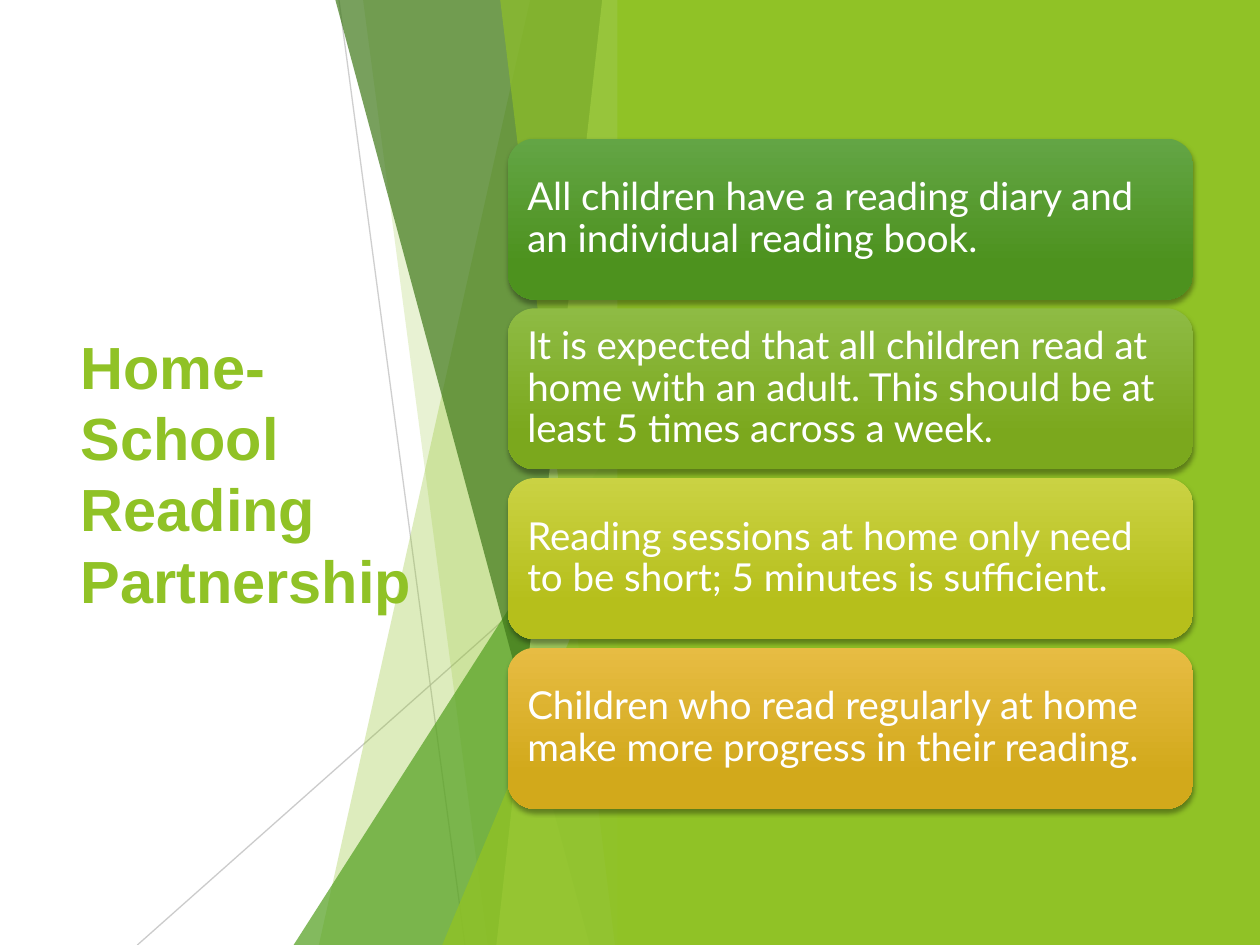
from lxml.etree import SubElement
from pptx import Presentation
from pptx.dml.color import RGBColor
from pptx.enum.shapes import MSO_CONNECTOR as Connector, MSO_SHAPE as Shape
from pptx.enum.text import MSO_ANCHOR as Anchor, MSO_AUTO_SIZE as AutoSize, PP_ALIGN as Align
from pptx.oxml.ns import qn
from pptx.util import Pt

WHITE = RGBColor(0xFF, 0xFF, 0xFF)
BLACK = RGBColor(0x00, 0x00, 0x00)
GREY = RGBColor(0xBF, 0xBF, 0xBF)
LIME = RGBColor(0x90, 0xC2, 0x26)
GREEN = RGBColor(0x54, 0xA0, 0x21)
FOREST = RGBColor(0x3F, 0x78, 0x19)
PALE = RGBColor(0xC0, 0xE4, 0x74)
CARD_COLOURS = [
    (RGBColor(0x63, 0xA5, 0x45), RGBColor(0x4D, 0x92, 0x1E)),
    (RGBColor(0x8E, 0xBB, 0x44), RGBColor(0x7B, 0xA8, 0x1D)),
    (RGBColor(0xCA, 0xD2, 0x43), RGBColor(0xB6, 0xBF, 0x1B)),
    (RGBColor(0xE7, 0xBC, 0x43), RGBColor(0xD2, 0xA9, 0x1B)),
]
CARD_TEXTS = [
    "All children have a reading diary and an individual reading book.",
    "It is expected that all children read at home with an adult. "
    "This should be at least 5 times across a week.",
    "Reading sessions at home only need to be short; 5 minutes is sufficient.",
    "Children who read regularly at home make more progress in their reading.",
]
WIDTH, HEIGHT = 720, 540
BAND_TOP, BAND_RIGHT = -0.6, 360
CARD_TOP, CARD_PITCH = 79.2, 97


def apply(target, values):
    for name, value in values.items():
        setattr(target, name, value)


class SlideBuilder:
    title_font = {"name": "Arial", "size": Pt(34), "bold": True}
    card_font = {"name": "Lato", "size": Pt(22)}
    card_frame = {"word_wrap": True, "vertical_anchor": Anchor.MIDDLE,
                  **{f"margin_{side}": Pt(6.6) for side in ("left", "top", "right", "bottom")}}

    def __init__(self, page):
        self.page = page
        self.shapes = page.shapes

    def fill_text(self, frame, text, font, colour, spacing=None):
        para = frame.paragraphs[0]
        apply(para, {"alignment": Align.LEFT, "line_spacing": spacing})
        span = para.add_run()
        span.text = text
        apply(span.font, font)
        span.font.color.rgb = colour

    def title(self, text, left, top, width, height):
        box = self.shapes.title
        apply(box, {"left": Pt(left), "top": Pt(top), "width": Pt(width), "height": Pt(height)})
        apply(box.text_frame, {"word_wrap": True, "auto_size": AutoSize.NONE,
                               "vertical_anchor": Anchor.MIDDLE})
        self.fill_text(box.text_frame, text, self.title_font, LIME)

    def fade(self, shape, opacity):
        for colour in shape._element.spPr.iter(qn("a:srgbClr")):
            SubElement(colour, qn("a:alpha"), val=str(opacity * 1000))

    def paint(self, shape, colour, opacity=100):
        shape.fill.solid()
        shape.fill.fore_color.rgb = colour
        if opacity < 100:
            self.fade(shape, opacity)
        shape.line.fill.background()
        shape.shadow.inherit = False

    def line(self, start, end, opacity):
        line = self.shapes.add_connector(Connector.STRAIGHT, *map(Pt, start + end))
        line.line.color.rgb = GREY
        line.line.width = Pt(0.75)
        self.fade(line, opacity)
        SubElement(line._element.spPr, qn("a:effectLst"))

    def band(self, top_left, bottom_left, colour, opacity):
        corners = [(BAND_RIGHT, BAND_TOP), (BAND_RIGHT, HEIGHT), (bottom_left, HEIGHT)]
        outline = self.shapes.build_freeform(Pt(top_left), Pt(BAND_TOP))
        outline.add_line_segments([(Pt(x), Pt(y)) for x, y in corners], close=True)
        self.paint(outline.convert_to_shape(), colour, opacity)

    def wedge(self, left, top, colour, opacity):
        shape = self.shapes.add_shape(Shape.ISOSCELES_TRIANGLE, Pt(left), Pt(top),
                                      Pt(BAND_RIGHT - left), Pt(HEIGHT - top))
        shape.adjustments[0] = 1
        self.paint(shape, colour, opacity)

    def panel(self, left):
        shape = self.shapes.add_shape(Shape.RECTANGLE, Pt(left), 0, Pt(WIDTH - left), Pt(HEIGHT))
        self.paint(shape, LIME)

    def card(self, text, top, colours):
        shape = self.shapes.add_shape(Shape.ROUNDED_RECTANGLE, Pt(290.2), Pt(top),
                                      Pt(391.6), Pt(92))
        shape.fill.gradient()
        shape.fill.gradient_angle = 270
        for stop, position, colour in zip(shape.fill.gradient_stops, (0, 0.78), colours):
            stop.position = position
            stop.color.rgb = colour
        shape.line.fill.background()
        self.drop_shadow(shape)
        apply(shape.text_frame, self.card_frame)
        self.fill_text(shape.text_frame, text, self.card_font, WHITE, 0.9)

    def drop_shadow(self, shape):
        shape.shadow.inherit = False
        effects = shape._element.spPr.find(qn("a:effectLst"))
        shadow = SubElement(effects, qn("a:outerShdw"), blurRad=str(Pt(3)), dist=str(Pt(2)),
                            dir="5400000", rotWithShape="0")
        colour = SubElement(shadow, qn("a:srgbClr"), val=str(BLACK))
        SubElement(colour, qn("a:alpha"), val="35000")


def main():
    deck = Presentation()
    apply(deck, {"slide_width": Pt(WIDTH), "slide_height": Pt(HEIGHT)})
    slide = SlideBuilder(deck.slides.add_slide(deck.slide_layouts[5]))

    slide.title("Home-School Reading Partnership", 39, 108.7, 209.5, 322.6)
    slide.line((193.7, 0), (265.7, HEIGHT), 75)
    slide.line((360, 290.2), (78.5, HEIGHT), 80)
    slide.band(303.1, 182.2, LIME, 30)
    slide.band(207.4, 278.6, LIME, 20)
    slide.wedge(167.8, 239.8, GREEN, 72)
    slide.band(191.5, 337, FOREST, 70)
    slide.band(344.2, 283.7, PALE, 70)
    slide.band(285.8, 351.4, LIME, 65)
    slide.wedge(252.7, 283, LIME, 80)
    slide.panel(352.8)
    for index, (text, colours) in enumerate(zip(CARD_TEXTS, CARD_COLOURS)):
        slide.card(text, CARD_TOP + index * CARD_PITCH, colours)

    deck.save("out.pptx")


if __name__ == "__main__":
    main()
